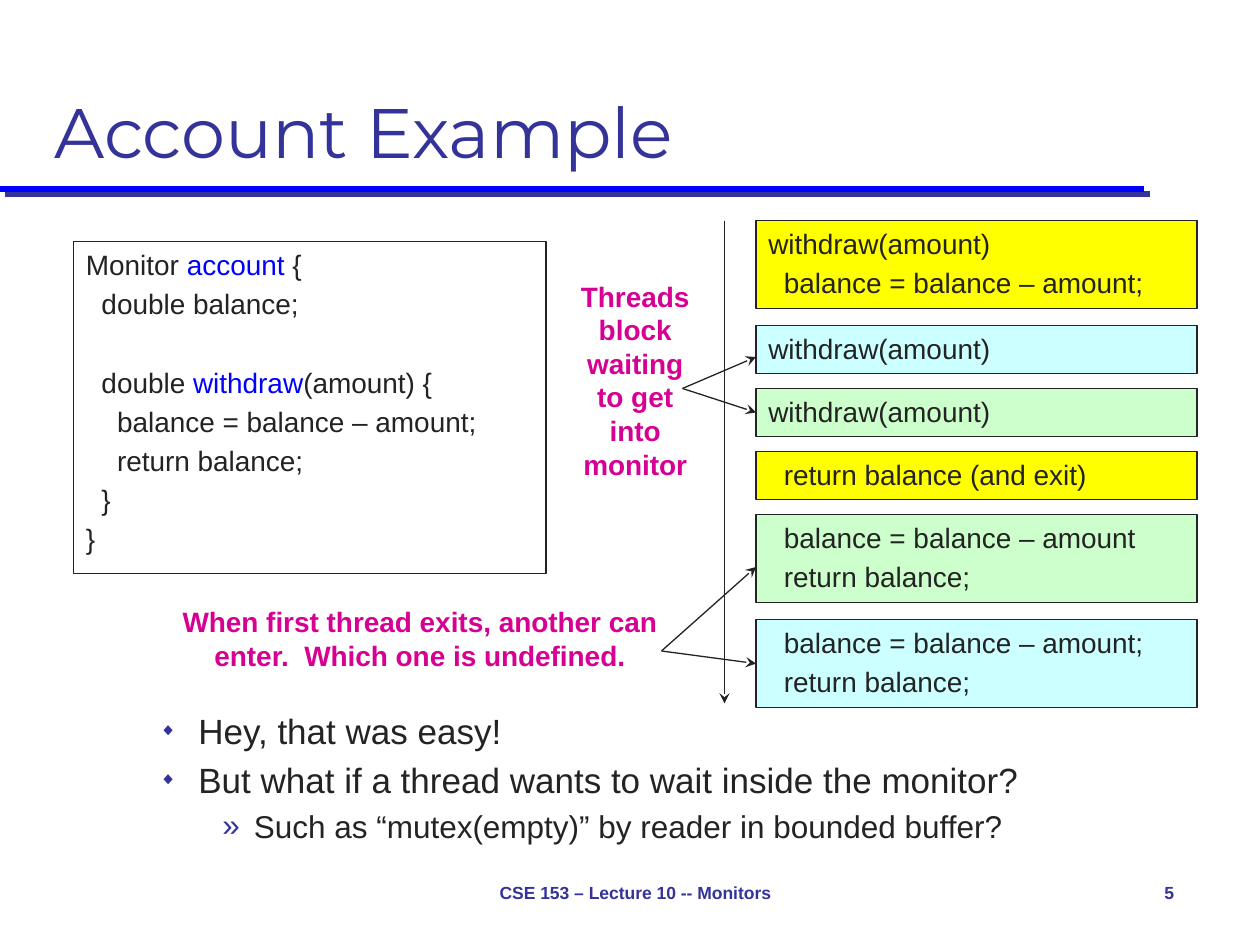
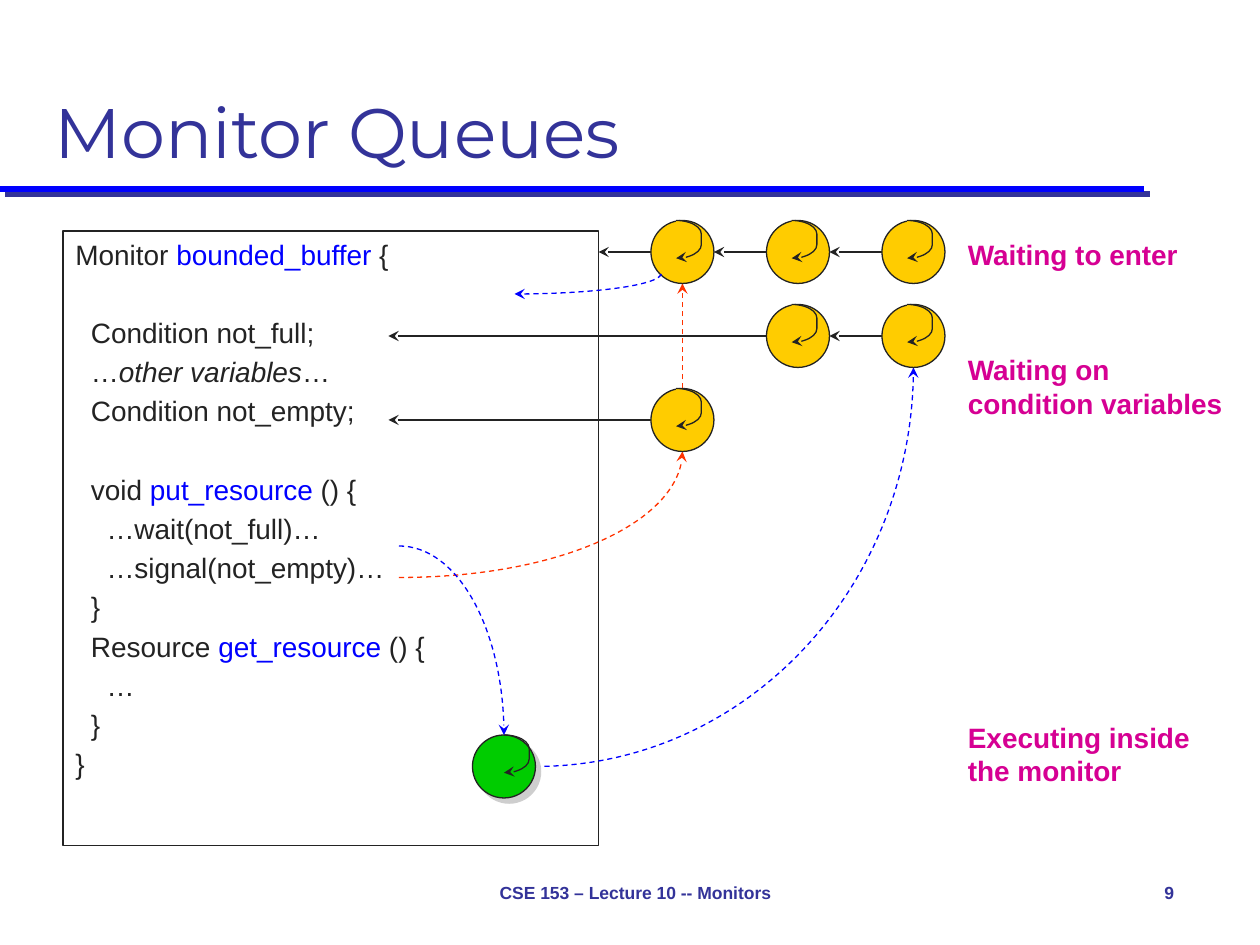
import dataclasses

import pptx
import pptx.dml.color
import pptx.enum.dml
import pptx.enum.shapes
import pptx.enum.text
import pptx.oxml
import pptx.oxml.ns
import pptx.util

SHAPE = pptx.enum.shapes.MSO_SHAPE
ALIGN = pptx.enum.text.PP_ALIGN
ANCHOR = pptx.enum.text.MSO_ANCHOR


@dataclasses.dataclass(frozen=True)
class Theme:
    ink: str = "232323"
    accent: str = "333399"
    blue: str = "0000FF"
    signal: str = "FF3300"
    callout: str = "D60093"
    yellow: str = "FFFF00"
    green: str = "CCFFCC"
    cyan: str = "CCFFFF"
    waiting: str = "FFCC00"
    running: str = "00CC00"
    shade: str = "CECECE"
    font: str = "Arial"
    title_font: str = "Montserrat"
    title: int = 40
    body: int = 20
    sub: int = 18
    code: int = 16
    footer: int = 10
    hairline: float = 0.75
    band: float = 3.5


THEME = Theme()
COLUMNS, ROWS = 120, 90
THREAD = 6


@dataclasses.dataclass(frozen=True)
class Box:
    left: float
    top: float
    width: float
    height: float

    def inner(self, column, row, width, height):
        return Box(self.left + column, self.top + row, width, height)

    def point(self, column, row):
        return self.left + column, self.top + row

    def emu(self):
        return [cells(n) for n in (self.left, self.top, self.width, self.height)]


@dataclasses.dataclass(frozen=True)
class Run:
    text: str
    color: str = THEME.ink
    italic: bool = False


@dataclasses.dataclass(frozen=True)
class Line:
    runs: tuple
    level: int = 0
    gap: bool = False


def code(*runs, level=0, gap=False):
    return Line(tuple(Run(r) if isinstance(r, str) else r for r in runs), level, gap)


def name(text):
    return Run(text, THEME.blue)


def cells(count):
    return pptx.util.Inches(count / 12)


def rgb(value):
    return pptx.dml.color.RGBColor.from_string(value)


def add_xml(parent, tag, **attributes):
    child = pptx.oxml.parse_xml(f"<a:{tag} {pptx.oxml.ns.nsdecls('a')}/>")
    for key, value in attributes.items():
        child.set(key, str(value))
    parent.append(child)
    return child


def stroke(shape, color=THEME.ink, width=THEME.hairline, dashed=False, arrow=None):
    shape.line.color.rgb = rgb(color)
    shape.line.width = pptx.util.Pt(width)
    if dashed:
        shape.line.dash_style = pptx.enum.dml.MSO_LINE.DASH
    if arrow:
        add_xml(shape.line._get_or_add_ln(), arrow, type="stealth")


def cast_shadow(effects, color):
    shadow = add_xml(effects, "outerShdw", dist=pptx.util.Pt(4.2), dir=45 * 60000, algn="ctr", rotWithShape=0)
    add_xml(add_xml(shadow, "srgbClr", val=color), "alpha", val=100000)


def add_run(paragraph, text, size, color, font=THEME.font, bold=False, italic=False):
    run = paragraph.add_run()
    run.text = text
    run.font.name = font
    run.font.size = pptx.util.Pt(size)
    run.font.bold = bold
    run.font.italic = italic
    run.font.color.rgb = rgb(color)


def set_frame(frame, anchor=ANCHOR.TOP):
    frame.word_wrap = True
    frame.vertical_anchor = anchor
    return frame


def label(slide, box, text, size, color, font=THEME.font, bold=True, align=ALIGN.LEFT, anchor=ANCHOR.TOP):
    frame = set_frame(slide.shapes.add_textbox(*box.emu()).text_frame, anchor)
    frame.paragraphs[0].alignment = align
    add_run(frame.paragraphs[0], text, size, color, font, bold)


def preset(shapes, kind, box, fill=None, arrow=None):
    shape = shapes.add_shape(kind, *box.emu())
    shape.shadow.inherit = False
    if fill:
        shape.fill.solid()
        shape.fill.fore_color.rgb = rgb(fill)
    else:
        shape.fill.background()
    stroke(shape, arrow=arrow)
    return shape


def connector(slide, start, end, glue=None, shadow=None, **style):
    line = slide.shapes.add_connector(
        pptx.enum.shapes.MSO_CONNECTOR.STRAIGHT, *(cells(n) for n in (*start, *end)))
    if glue:
        line.end_connect(glue, 1)
    stroke(line, **style)
    effects = add_xml(line._element.spPr, "effectLst")
    if shadow:
        cast_shadow(effects, shadow)


def quarter_curve(slide, start, end, color, arrow="tailEnd"):
    (x0, y0), (x1, y1) = start, end
    bend = 0.55
    points = [(x0 + bend * (x1 - x0), y0), (x1, y1 - bend * (y1 - y0)), end]
    builder = slide.shapes.build_freeform(cells(x0), cells(y0))
    builder.add_line_segments([(cells(x), cells(y)) for x, y in points], close=False)
    curve = builder.convert_to_shape()
    outline = curve._element.xpath(".//a:path")[0]
    segments = outline.xpath("./a:lnTo")
    bezier = add_xml(outline, "cubicBezTo")
    for segment in segments:
        bezier.append(segment[0])
        outline.remove(segment)
    curve.shadow.inherit = False
    curve.fill.background()
    stroke(curve, color, dashed=True, arrow=arrow)


def code_box(slide, box, lines, fill=None):
    listing = preset(slide.shapes, SHAPE.RECTANGLE, box, fill)
    frame = set_frame(listing.text_frame)
    spacing = 0.2 * THEME.code
    line_pitch = 1.2 * THEME.code + spacing
    for index, line in enumerate(lines):
        paragraph = frame.add_paragraph() if index else frame.paragraphs[0]
        paragraph.alignment = ALIGN.LEFT
        paragraph._p.get_or_add_pPr().set("marL", str(pptx.util.Pt(8.9 * line.level)))
        if index:
            paragraph.space_before = pptx.util.Pt(spacing + line_pitch * line.gap)
        for run in line.runs:
            add_run(paragraph, run.text, THEME.code, run.color, italic=run.italic)
    return listing


def base_slide(deck, title, number):
    slide = deck.slides.add_slide(deck.slide_layouts[6])
    page = Box(0, 0, COLUMNS, ROWS)
    connector(slide, page.point(0, 18), page.point(109, 18),
              color=THEME.blue, width=THEME.band, shadow=THEME.accent)
    label(slide, page.inner(4, 2, 112, 15), title, THEME.title, THEME.accent,
          THEME.title_font, bold=False, anchor=ANCHOR.BOTTOM)
    for column, width, text, align in (
        (37, 47, "CSE 153 – Lecture 10 -- Monitors", ALIGN.CENTER),
        (105, 8, number, ALIGN.RIGHT),
    ):
        label(slide, page.inner(column, 82, width, 6), text, THEME.footer, THEME.accent,
              align=align, anchor=ANCHOR.MIDDLE)
    return slide


def event_timeline(slide, box, events):
    connector(slide, box.point(0, 0), box.point(0, box.height), arrow="tailEnd")
    row, steps = 0, []
    for fill, lines in events:
        double = len(lines) == 2
        area = box.inner(3, row, box.width - 3, 8.4 if double else 4.56)
        steps.append(code_box(slide, area, lines, fill))
        row += 10 if double else 6
    return steps


def callout(slide, box, text, origin, targets):
    label(slide, box, text, THEME.code, THEME.callout, align=ALIGN.CENTER)
    for target, glue in targets:
        connector(slide, origin, target, glue, arrow="tailEnd")


def takeaways(slide, box, points):
    levels = (
        (THEME.body, 0.81, -0.31, "◆", 50),
        (THEME.sub, 1.25, -0.25, "»", 100),
    )
    frame = set_frame(slide.shapes.add_textbox(*box.emu()).text_frame)
    for index, (level, text) in enumerate(points):
        size, margin, hanging, mark, scale = levels[level]
        paragraph = frame.add_paragraph() if index else frame.paragraphs[0]
        if index:
            paragraph.space_before = pptx.util.Pt(0.2 * size)
        properties = paragraph._p.get_or_add_pPr()
        properties.set("marL", str(pptx.util.Inches(margin)))
        properties.set("indent", str(pptx.util.Inches(hanging)))
        add_xml(add_xml(properties, "buClr"), "srgbClr", val=THEME.accent)
        add_xml(properties, "buSzPct", val=scale * 1000)
        add_xml(properties, "buFont", typeface=THEME.font)
        add_xml(properties, "buChar", char=mark)
        add_run(paragraph, text, size, THEME.ink)


def thread(shapes, box, fill, loop_fill, loop_column):
    body = preset(shapes, SHAPE.OVAL, box, fill)
    loop = preset(shapes, SHAPE.RIGHT_BRACKET, box.inner(loop_column, 0, 2.4, 3.6), loop_fill, "tailEnd")
    loop.adjustments[0] = 0.54
    return body


def waiting_queues(slide, box, lanes):
    first, pitch = 25, 11
    for row, slots, target in lanes:
        middle = row + THREAD / 2
        for slot in slots:
            left = first + pitch * slot
            connector(slide, box.point(left, middle), box.point(target, middle), arrow="tailEnd")
            thread(slide.shapes.add_group_shape().shapes, box.inner(left, row, THREAD, THREAD),
                   THEME.waiting, THEME.waiting, 2.4)
            target = left + THREAD


def account_slide(deck):
    slide = base_slide(deck, "Account Example", "5")
    code_box(slide, Box(7, 23, 45, 31.6), [
        code("Monitor ", name("account"), " {"),
        code("double balance;", level=1),
        code("double ", name("withdraw"), "(amount) {", level=1, gap=True),
        code("balance = balance – amount;", level=2),
        code("return balance;", level=2),
        code("}", level=1),
        code("}"),
    ])
    call = code("withdraw(amount)")
    update = code("balance = balance – amount;", level=1)
    finish = code("return balance;", level=1)
    steps = event_timeline(slide, Box(69, 21, 45, 46), [
        (THEME.yellow, [call, update]),
        (THEME.cyan, [call]),
        (THEME.green, [call]),
        (THEME.yellow, [code("return balance (and exit)", level=1)]),
        (THEME.green, [code("balance = balance – amount", level=1), finish]),
        (THEME.cyan, [update, finish]),
    ])
    callout(slide, Box(54, 26, 13, 20.4), "Threads block waiting to get into monitor",
            (65, 37), [((72, 34), None), ((72, 39), steps[2])])
    callout(slide, Box(15, 57, 50, 7.7),
            "When first thread exits, another can enter.  Which one is undefined.",
            (63, 62), [((72, 54), None), ((72, 63), steps[5])])
    takeaways(slide, Box(8, 67, 101, 15), [
        (0, "Hey, that was easy!"),
        (0, "But what if a thread wants to wait inside the monitor?"),
        (1, "Such as “mutex(empty)” by reader in bounded buffer?"),
    ])


def queues_slide(deck):
    slide = base_slide(deck, "Monitor Queues", "9")
    code_box(slide, Box(6, 22, 51, 58.5), [
        code("Monitor ", name("bounded_buffer"), " {"),
        code("Condition not_full;", level=1, gap=True),
        code("…", Run("other variables", italic=True), "…", level=1),
        code("Condition not_empty;", level=1),
        code("void ", name("put_resource"), " () {", level=1, gap=True),
        code("…wait(not_full)…", level=2),
        code("…signal(not_empty)…", level=2),
        code("}", level=1),
        code("Resource ", name("get_resource"), " () {", level=1),
        code("…", level=2),
        code("}", level=1),
        code("}"),
    ])
    for row, width, height, text in (
        (22, 24, 4.4, "Waiting to enter"),
        (33, 27, 7.7, "Waiting on condition variables"),
        (68, 27, 7.7, "Executing inside the monitor"),
    ):
        label(slide, Box(91, row, width, height), text, THEME.code, THEME.callout)
    quarter_curve(slide, (51, 73), (87, 35), THEME.blue)
    quarter_curve(slide, (38, 55), (65, 43), THEME.signal)
    connector(slide, (65, 37), (65, 27), color=THEME.signal, dashed=True, arrow="tailEnd")
    waiting_queues(slide, Box(37, 21, 53, 22), [(0, (0, 1, 2), 20), (8, (1, 2), 0), (16, (0,), 0)])
    executing = thread(slide.shapes, Box(45, 70, THREAD, THREAD), THEME.running, None, 3)
    cast_shadow(executing._element.spPr.xpath("./a:effectLst")[0], THEME.shade)
    quarter_curve(slide, (38, 52), (48, 70), THEME.blue)
    quarter_curve(slide, (49, 28), (63, 26), THEME.blue, "headEnd")


def main():
    deck = pptx.Presentation()
    deck.slide_width, deck.slide_height = cells(COLUMNS), cells(ROWS)
    account_slide(deck)
    queues_slide(deck)
    deck.save("out.pptx")


if __name__ == "__main__":
    main()
